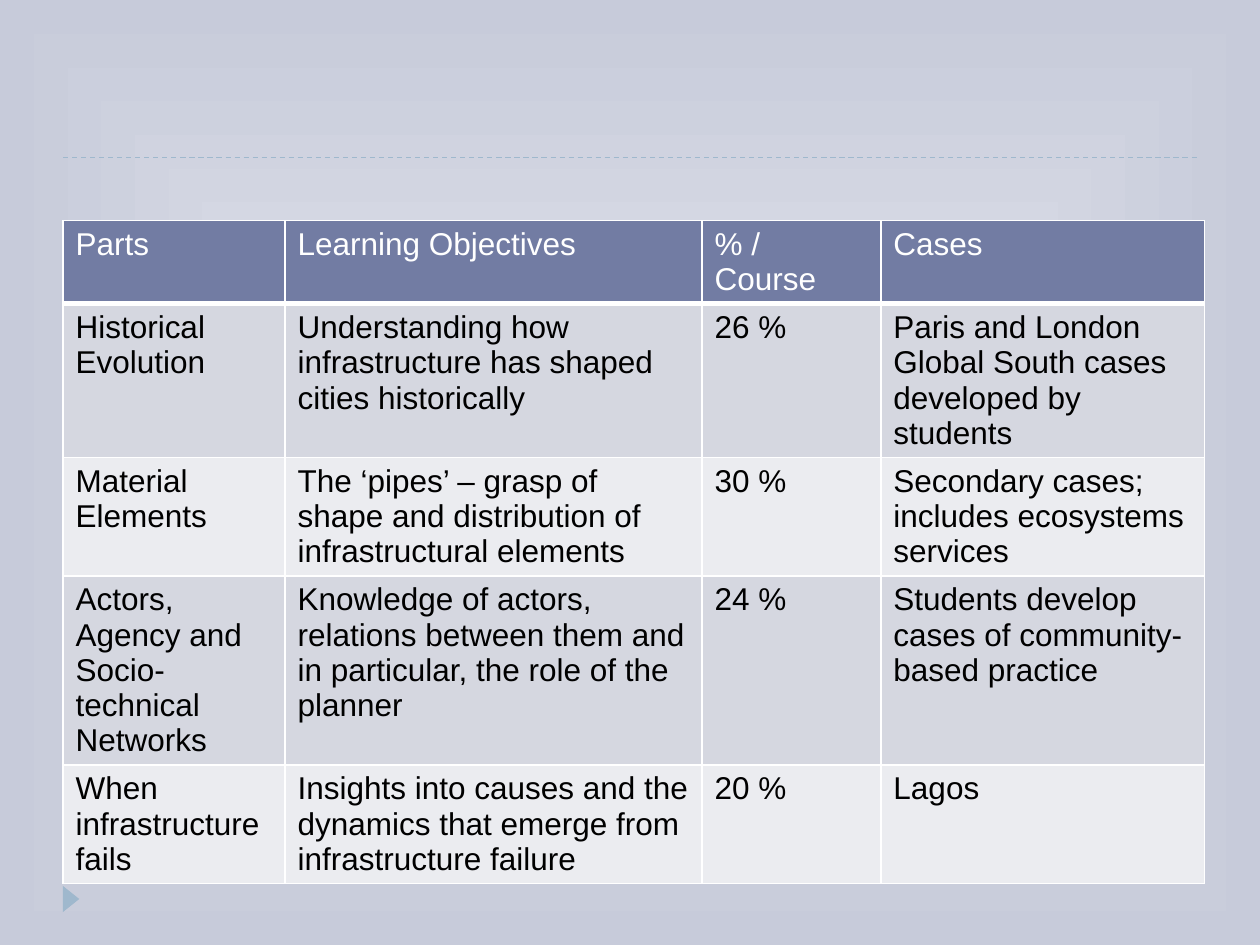
from lxml.etree import SubElement
from pptx import Presentation
from pptx.dml.color import RGBColor
from pptx.enum.dml import MSO_LINE
from pptx.enum.shapes import MSO_CONNECTOR, MSO_SHAPE
from pptx.oxml import parse_xml
from pptx.oxml.ns import nsdecls, qn
from pptx.util import Pt

# Content: the first row is the header; a list holds several paragraphs
ROWS = [
    ("Parts", "Learning Objectives", "% / Course", "Cases"),
    ("Historical Evolution",
     "Understanding how infrastructure has shaped cities historically",
     "26 %",
     ["Paris and London", "Global South cases developed by students"]),
    ("Material Elements",
     "The ‘pipes’ – grasp of shape and distribution of infrastructural elements",
     "30 %",
     "Secondary cases; includes ecosystems services"),
    ("Actors, Agency and Socio-technical Networks",
     "Knowledge of actors, relations between them and in particular, "
     "the role of the planner",
     "24 %",
     "Students develop cases of community-based practice"),
    ("When infrastructure fails",
     "Insights into causes and the dynamics that emerge from infrastructure failure",
     "20 %",
     "Lagos"),
]
COL_WIDTHS = [126.9, 238.3, 102.2, 185]
ROW_HEIGHT = 29.2  # rows grow to fit their text
MARGIN = 36

WHITE = RGBColor(0xFF, 0xFF, 0xFF)
BLACK = RGBColor(0, 0, 0)
ACCENT = RGBColor(0x9F, 0xB8, 0xCD)
HEADER = RGBColor(0x72, 0x7C, 0xA3)
BANDS = [RGBColor(0xD5, 0xD7, 0xE0), RGBColor(0xEB, 0xEC, 0xF0)]
BG_CENTRE = RGBColor(0xE3, 0xE5, 0xED)
BG_EDGE = RGBColor(0xC7, 0xCB, 0xDA)


def set_text(tf, text, size=18, color=BLACK, font="Arial"):
    paragraphs = text if isinstance(text, list) else [text]
    for i, line in enumerate(paragraphs):
        p = tf.add_paragraph() if i else tf.paragraphs[0]
        r = p.add_run()
        r.text = line
        r.font.size = Pt(size)
        r.font.name = font
        r.font.color.rgb = color


def set_borders(cell, bottom=1):
    widths = {"lnL": 1, "lnR": 1, "lnT": 1, "lnB": bottom}
    for i, (side, width) in enumerate(widths.items()):
        cell._tc.get_or_add_tcPr().insert(i, parse_xml(
            f'<a:{side} {nsdecls("a")} w="{Pt(width)}"><a:solidFill>'
            f'<a:srgbClr val="{WHITE}"/></a:solidFill></a:{side}>'))


prs = Presentation()
prs.slide_width, prs.slide_height = Pt(720), Pt(540)
s = prs.slides.add_slide(prs.slide_layouts[6])

# Background: gradient from the centre to the edges
fill = s.background.fill
fill.gradient()
for stop, color in zip(fill.gradient_stops, (BG_CENTRE, BG_EDGE)):
    stop.color.rgb = color
grad = s.background._cSld.find(".//" + qn("a:gradFill"))
grad.remove(grad.find(qn("a:lin")))
shade = parse_xml(
    f'<a:path {nsdecls("a")} path="rect">'
    '<a:fillToRect l="50000" t="50000" r="50000" b="50000"/></a:path>')
grad.find(qn("a:gsLst")).addnext(shade)

# Dashed title rule
rule = s.shapes.add_connector(
    MSO_CONNECTOR.STRAIGHT, Pt(MARGIN), Pt(90), Pt(720 - MARGIN), Pt(90))
rule.line.color.rgb = ACCENT
rule.line.width = Pt(0.75)
rule.line.dash_style = MSO_LINE.DASH
SubElement(rule._element.spPr, qn("a:effectLst"))

# Footer marker
marker = s.shapes.add_shape(
    MSO_SHAPE.ISOSCELES_TRIANGLE, Pt(33.1), Pt(509), Pt(15), Pt(9.4))
marker.rotation = 90
marker.shadow.inherit = False
marker.fill.solid()
marker.fill.fore_color.rgb = ACCENT
marker.line.fill.background()

# Course table
table = s.shapes.add_table(
    len(ROWS), len(COL_WIDTHS), Pt(MARGIN), Pt(126),
    Pt(sum(COL_WIDTHS)), Pt(ROW_HEIGHT * len(ROWS))).table
for column, width in zip(table.columns, COL_WIDTHS):
    column.width = Pt(width)
for i, row in enumerate(ROWS):
    table.rows[i].height = Pt(ROW_HEIGHT)
    is_header = i == 0
    for j, text in enumerate(row):
        cell = table.cell(i, j)
        cell.fill.solid()
        cell.fill.fore_color.rgb = HEADER if is_header else BANDS[(i - 1) % 2]
        set_borders(cell, bottom=3 if is_header else 1)
        set_text(cell.text_frame, text, color=WHITE if is_header else BLACK)

prs.save("out.pptx")
